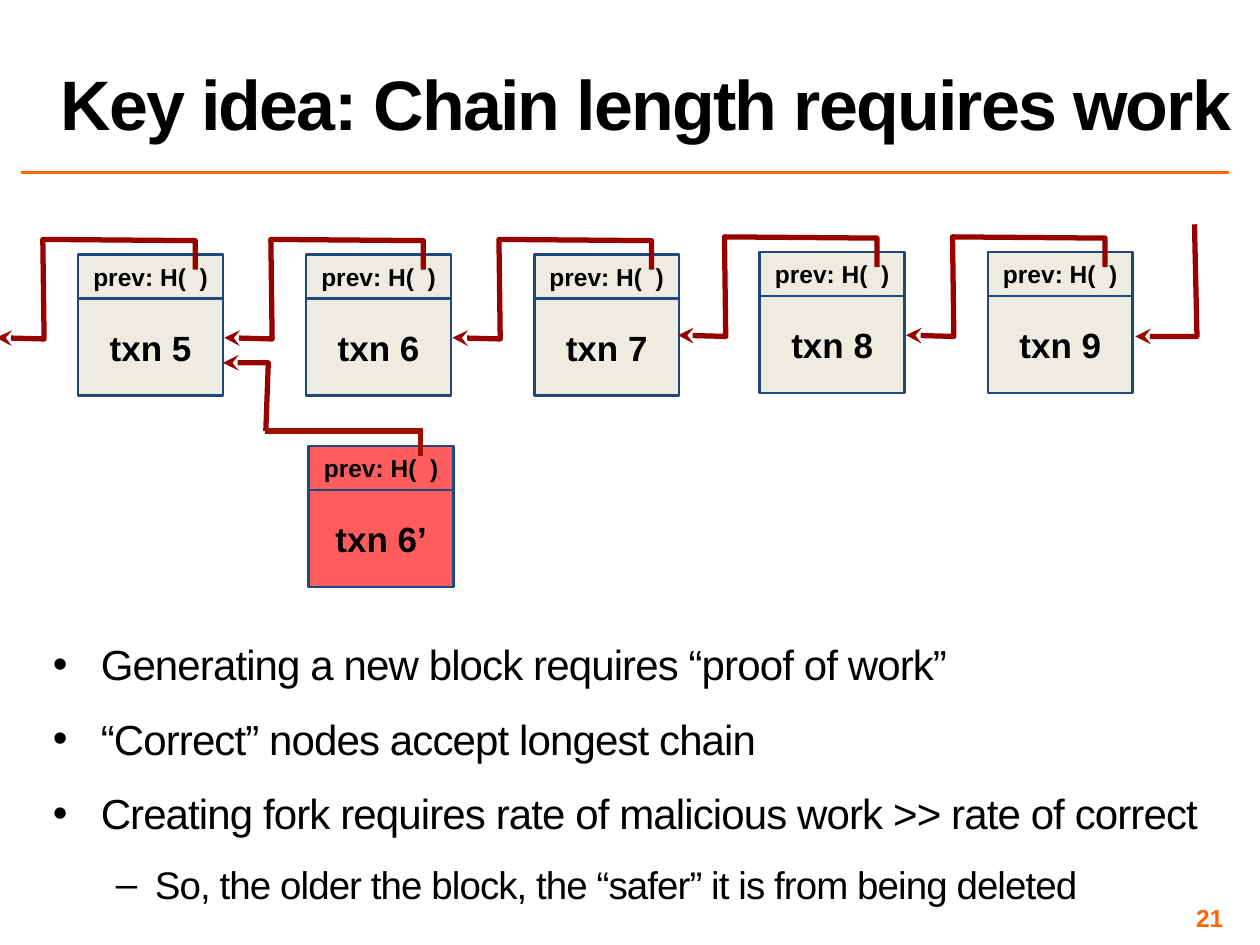
from lxml import etree
from pptx import Presentation
from pptx import util as u
from pptx.dml.color import RGBColor
from pptx.enum import shapes, text
from pptx.oxml import ns

BLACK, ORANGE, NAVY = "000000", "FF6600", "1F497D"
CREAM, RED, DARK_RED, FORK_RED = "EEECE1", "FF5C5E", "990000", "991200"
BLOCK_WIDTH, HEAD_HEIGHT, BODY_HEIGHT = 1.15, 0.35, 0.77


def color(value):
    return RGBColor.from_string(value)


class SlideBuilder:
    font = "Arial"

    def __init__(self, slide):
        self.slide = slide

    def style_runs(self, paragraph, size, fill=BLACK, bold=False, spacing=0):
        for run in paragraph.runs:
            run.font.name = self.font
            run.font.size = u.Pt(size)
            run.font.bold = bold
            run.font.color.rgb = color(fill)
            if spacing:
                run.font._element.set("spc", str(int(spacing * 100)))

    def set_frame(self, text_frame, anchor, inset_x, inset_y):
        text_frame.word_wrap = True
        text_frame.vertical_anchor = anchor
        text_frame.margin_left = text_frame.margin_right = u.Inches(inset_x)
        text_frame.margin_top = text_frame.margin_bottom = u.Inches(inset_y)

    def text_box(self, box, lines, anchor, inset_x=0.04, inset_y=0.04):
        shape = self.slide.shapes.add_textbox(*map(u.Inches, box))
        self.set_frame(shape.text_frame, anchor, inset_x, inset_y)
        shape.text_frame.text = "\n".join(lines)
        return shape.text_frame.paragraphs

    def bullet(self, paragraph, mark, left, hanging):
        properties = paragraph._p.get_or_add_pPr()
        properties.set("marL", str(u.Inches(left)))
        properties.set("indent", str(-u.Inches(hanging)))
        etree.SubElement(properties, ns.qn("a:buFont"), typeface=self.font)
        etree.SubElement(properties, ns.qn("a:buChar"), char=mark)

    def rectangle(self, box, label, size, fill):
        shape = self.slide.shapes.add_shape(
            shapes.MSO_SHAPE.RECTANGLE, *map(u.Inches, box))
        shape.shadow.inherit = False
        shape.fill.solid()
        shape.fill.fore_color.rgb = color(fill)
        shape.line.color.rgb = color(NAVY)
        shape.line.width = u.Pt(1.5)
        self.set_frame(shape.text_frame, text.MSO_ANCHOR.MIDDLE, 0.1, 0.1)
        shape.text_frame.text = label
        paragraph = shape.text_frame.paragraphs[0]
        paragraph.alignment = text.PP_ALIGN.CENTER
        self.style_runs(paragraph, size, bold=True)

    def block(self, left, top, label, fill=CREAM):
        self.rectangle((left, top + HEAD_HEIGHT, BLOCK_WIDTH, BODY_HEIGHT),
                       label, 20, fill)
        self.rectangle((left, top, BLOCK_WIDTH, HEAD_HEIGHT),
                       "prev: H(  )", 14, fill)

    def arrow(self, points):
        corners = [(u.Inches(x), u.Inches(y)) for x, y in points]
        builder = self.slide.shapes.build_freeform(*corners[0])
        builder.add_line_segments(corners[1:], close=False)
        shape = builder.convert_to_shape()
        shape.shadow.inherit = False
        shape.fill.background()
        shape.line.color.rgb = color(DARK_RED)
        shape.line.width = u.Pt(3)
        etree.SubElement(shape.line._get_or_add_ln(), ns.qn("a:tailEnd"),
                         type="stealth")

    def line(self, start, end, stroke, width):
        connector = self.slide.shapes.add_connector(
            shapes.MSO_CONNECTOR.STRAIGHT, *map(u.Inches, start + end))
        connector.line.color.rgb = color(stroke)
        connector.line.width = u.Pt(width)
        etree.SubElement(connector._element.spPr, ns.qn("a:effectLst"))


def main():
    presentation = Presentation()
    presentation.slide_width = u.Inches(10)
    presentation.slide_height = u.Inches(7.5)
    builder = SlideBuilder(
        presentation.slides.add_slide(presentation.slide_layouts[6]))

    # Title, rule and page number
    builder.line((0.17, 1.37), (9.75, 1.37), ORANGE, 2)
    title = builder.text_box(
        (0.38, 0.02, 9.62, 1.17), ["Key idea: Chain length requires work"],
        text.MSO_ANCHOR.BOTTOM, 0.1, 0.05)[0]
    title.line_spacing = 0.8
    builder.style_runs(title, 40, bold=True, spacing=-1)
    number = builder.text_box((7.42, 7.17, 2.33, 0.23), ["21"],
                              text.MSO_ANCHOR.MIDDLE)[0]
    number.alignment = text.PP_ALIGN.RIGHT
    builder.style_runs(number, 14, ORANGE, bold=True)

    # Main chain: each block points back to the one before it
    back_pointer = [(0.93, 0.12), (0.93, -0.11), (-0.28, -0.12),
                    (-0.27, 0.67), (-0.65, 0.66)]
    chain = [(0.62, 2.02), (2.43, 2.02), (4.24, 2.02), (6.03, 2), (7.84, 2)]
    for index, (left, top) in enumerate(chain, start=5):
        builder.block(left, top, f"txn {index}")
        builder.arrow([(left + x, top + y) for x, y in back_pointer])
    builder.arrow([(9.48, 1.78), (9.5, 2.67), (9.01, 2.67)])

    # Fork
    builder.block(2.45, 3.54, "txn 6’", RED)
    builder.arrow([(2.11, 3.42), (2.13, 2.88), (1.77, 2.88)])
    builder.line((2.1, 3.42), (3.33, 3.42), FORK_RED, 3)
    builder.line((3.34, 3.62), (3.34, 3.4), FORK_RED, 3)

    # Bullets
    bullets = [
        ("Generating a new block requires “proof of work”", 0),
        ("“Correct” nodes accept longest chain", 0),
        ("Creating fork requires rate of malicious work >> rate of correct", 0),
        ("So, the older the block, the “safer” it is from being deleted", 1),
    ]
    levels = [("•", 0.38, 0.38, 24), ("–", 0.81, 0.31, 22)]
    paragraphs = builder.text_box((0.38, 4.95, 9.37, 2.57),
                                  [line for line, _ in bullets],
                                  text.MSO_ANCHOR.TOP)
    for paragraph, (_, level) in zip(paragraphs, bullets):
        mark, left, hanging, size = levels[level]
        paragraph.level = level
        paragraph.line_spacing = 1.2
        paragraph.space_before = paragraph.space_after = u.Pt(4)
        builder.bullet(paragraph, mark, left, hanging)
        builder.style_runs(paragraph, size, spacing=-0.5)

    presentation.save("out.pptx")


if __name__ == "__main__":
    main()
